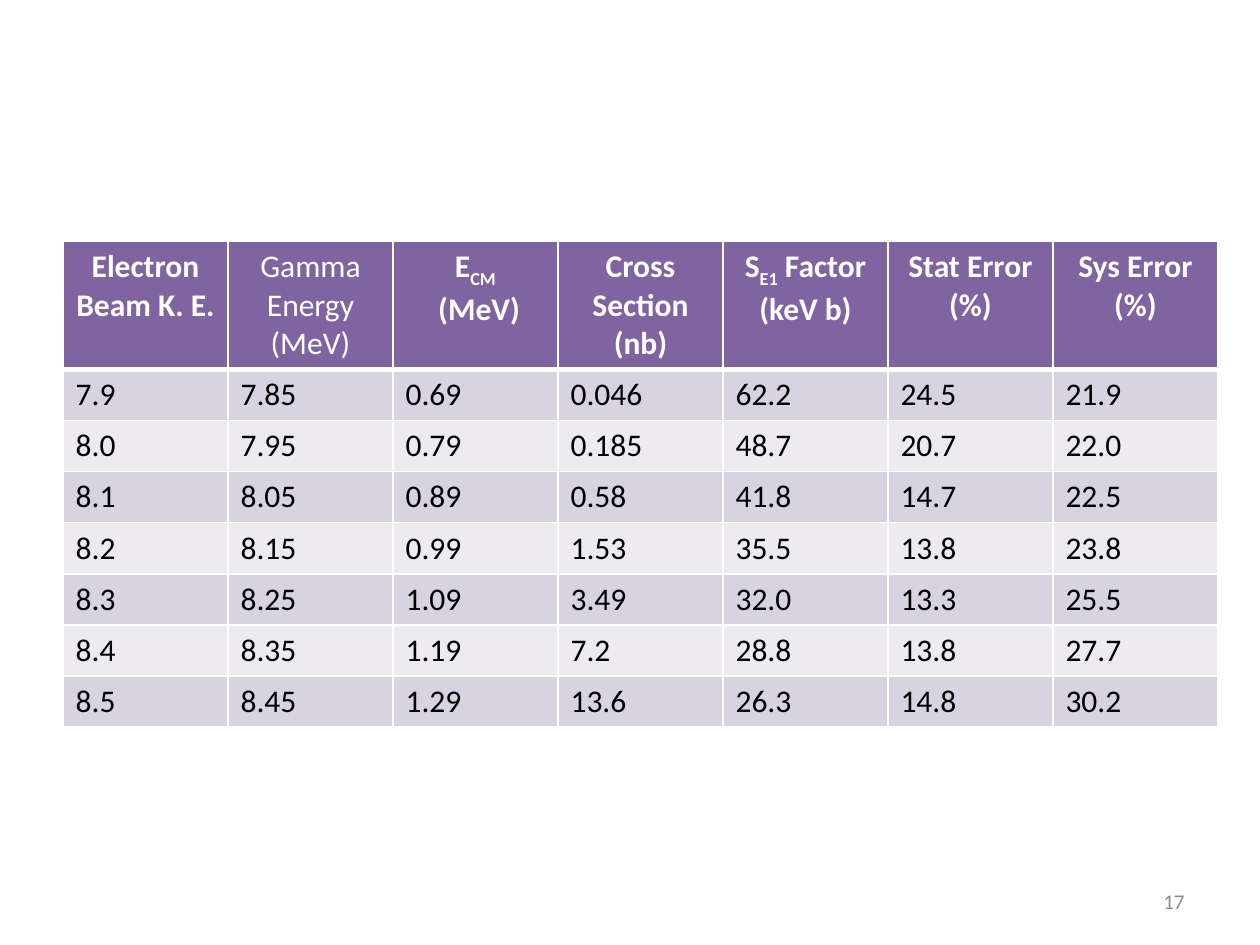
"""Build a slide with a table of cross sections and S factors by beam energy."""
from dataclasses import dataclass

from lxml import etree
from pptx import Presentation
from pptx.dml.color import RGBColor
from pptx.enum.text import MSO_ANCHOR, PP_ALIGN
from pptx.oxml.ns import qn
from pptx.util import Pt

CENTER, LEFT, RIGHT = PP_ALIGN.CENTER, PP_ALIGN.LEFT, PP_ALIGN.RIGHT
MIDDLE = MSO_ANCHOR.MIDDLE


@dataclass(frozen=True)
class Theme:
    font: str = "Calibri"
    table_size: float = 18
    number_size: float = 12
    header_fill: str = "8064A2"
    bands: tuple = ("D8D3E0", "EDEAF0")
    header_text: str = "FFFFFF"
    body_text: str = "000000"
    number_text: str = "8C8C8C"
    border: str = "FFFFFF"
    thin: float = 1
    thick: float = 3


class Builder:
    def __init__(self, slide, theme):
        self.s = slide
        self.theme = theme

    def paragraph(self, p, text, size, color, align, bold=False):
        p.alignment = align
        for i, part in enumerate(text.split("_")):
            if not part:
                continue
            r = p.add_run()
            r.text = part
            r.font.name = self.theme.font
            r.font.size = Pt(size)
            r.font.bold = bold
            r.font.color.rgb = RGBColor.from_string(color)
            if i % 2:
                r.font._element.set("baseline", "-25000")

    def text(self, text, x, y, w, h, size, color, align):
        tf = self.s.shapes.add_textbox(Pt(x), Pt(y), Pt(w), Pt(h)).text_frame
        tf.word_wrap = True
        tf.vertical_anchor = MIDDLE
        self.paragraph(tf.paragraphs[0], text, size, color, align)

    def border(self, cell, side, width):
        ln = etree.SubElement(cell._tc.get_or_add_tcPr(), qn(f"a:ln{side}"), w=str(Pt(width)))
        fill = etree.SubElement(ln, qn("a:solidFill"))
        etree.SubElement(fill, qn("a:srgbClr"), val=self.theme.border)

    def cell(self, cell, text, row, bold):
        t = self.theme
        header = row == 0
        for side in "LRTB":
            heavy = (row, side) in ((0, "B"), (1, "T"))
            self.border(cell, side, t.thick if heavy else t.thin)
        fill = t.header_fill if header else t.bands[(row - 1) % 2]
        cell.fill.solid()
        cell.fill.fore_color.rgb = RGBColor.from_string(fill)
        color = t.header_text if header else t.body_text
        tf = cell.text_frame
        for i, line in enumerate(text.split("\n")):
            p = tf.add_paragraph() if i else tf.paragraphs[0]
            self.paragraph(p, line, t.table_size, color, CENTER if header else LEFT, bold)

    def table(self, rows, x, y, col_w, header_h, row_h, plain_headers):
        cols = len(rows[0])
        height = header_h + row_h * (len(rows) - 1)
        table = self.s.shapes.add_table(
            len(rows), cols, Pt(x), Pt(y), Pt(col_w * cols), Pt(height)).table
        table.horz_banding = False
        for col in table.columns:
            col.width = Pt(col_w)
        for i, values in enumerate(rows):
            table.rows[i].height = Pt(row_h if i else header_h)
            for j, value in enumerate(values):
                bold = i == 0 and value not in plain_headers
                self.cell(table.cell(i, j), value, i, bold)


GAMMA = "Gamma\nEnergy (MeV)"
HEADERS = ["Electron\nBeam K. E.", GAMMA, "E_CM_\n (MeV)", "Cross Section (nb)",
           "S_E1_ Factor\n(keV b)", "Stat Error\n(%)", "Sys Error\n(%)"]
RESULTS = [
    ["7.9", "7.85", "0.69", "0.046", "62.2", "24.5", "21.9"],
    ["8.0", "7.95", "0.79", "0.185", "48.7", "20.7", "22.0"],
    ["8.1", "8.05", "0.89", "0.58", "41.8", "14.7", "22.5"],
    ["8.2", "8.15", "0.99", "1.53", "35.5", "13.8", "23.8"],
    ["8.3", "8.25", "1.09", "3.49", "32.0", "13.3", "25.5"],
    ["8.4", "8.35", "1.19", "7.2", "28.8", "13.8", "27.7"],
    ["8.5", "8.45", "1.29", "13.6", "26.3", "14.8", "30.2"],
]


def main():
    prs = Presentation()
    prs.slide_width, prs.slide_height = Pt(720), Pt(540)
    theme = Theme()
    b = Builder(prs.slides.add_slide(prs.slide_layouts[6]), theme)
    b.table([HEADERS] + RESULTS, x=36, y=138, col_w=94.3, header_h=72, row_h=29.2,
            plain_headers=(GAMMA,))
    b.text("17", 516, 500.5, 168, 28.75, theme.number_size, theme.number_text, RIGHT)
    prs.save("out.pptx")


if __name__ == "__main__":
    main()
